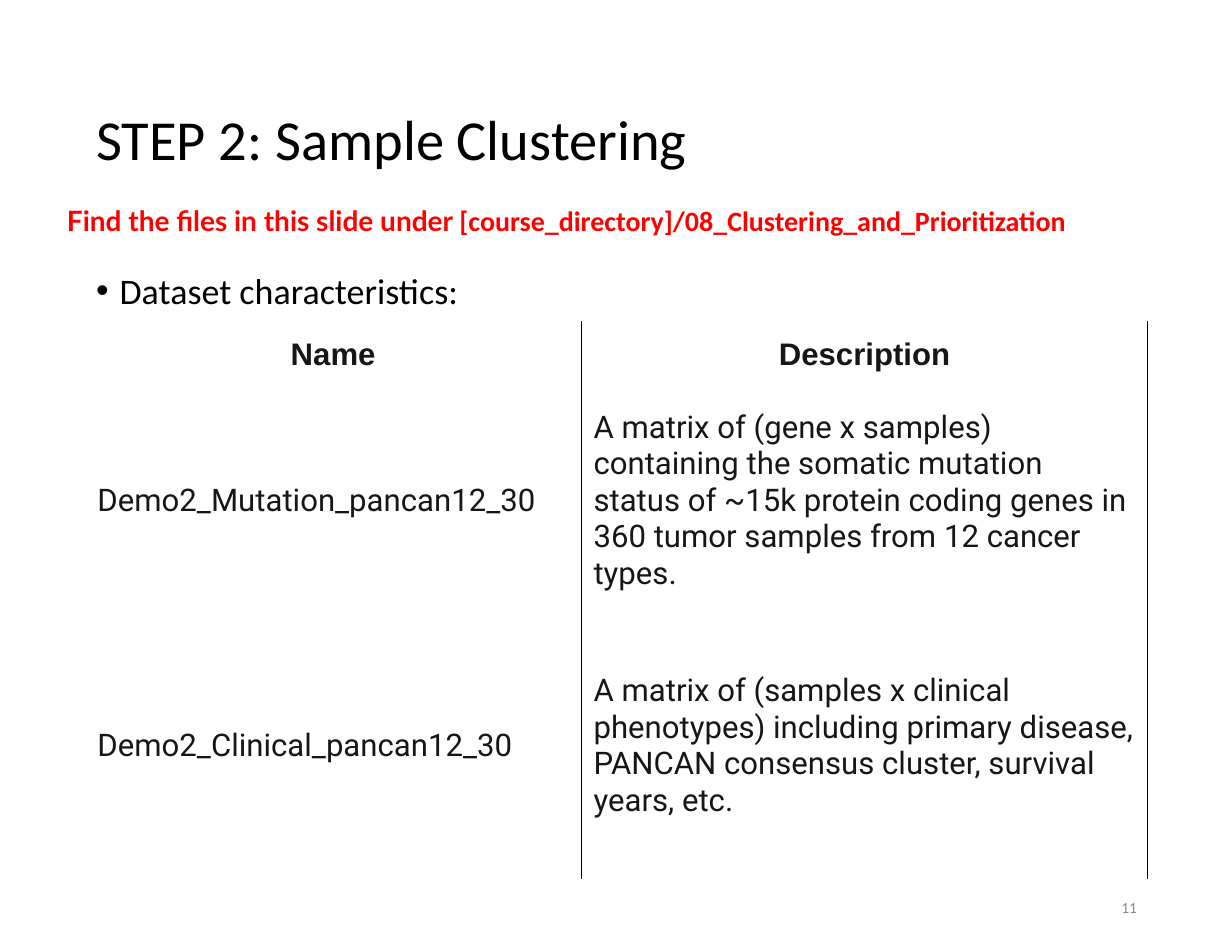
from lxml import etree
from pptx import Presentation
from pptx import util as u
from pptx.dml.color import RGBColor
from pptx.enum import text
from pptx.oxml.ns import qn

MIDDLE = text.MSO_ANCHOR.MIDDLE
LEFT, CENTER, RIGHT = text.PP_ALIGN.LEFT, text.PP_ALIGN.CENTER, text.PP_ALIGN.RIGHT

# Each run: words, font, size, bold, colour
TITLE = [("STEP 2: Sample Clustering", "Calibri", 36.3, False, "000000")]
BULLET = [("Dataset characteristics:", "Calibri", 23.1, False, "000000")]
PAGE_NUMBER = [("11", "Calibri", 9.9, False, "888888")]
FILE_NOTE = [
    ("Find the files in this slide under\u00a0", "Lato", 18, True, "FF0000"),
    ("[course_directory]/08_Clustering_and_Prioritization", "Calibri", 18, True, "FF0000"),
]
DATASETS = [
    ("Name", "Description"),
    ("Demo2_Mutation_pancan12_30",
     "A matrix of (gene x samples) containing the somatic mutation status of "
     "~15k protein coding genes in 360 tumor samples from 12 cancer types."),
    ("Demo2_Clinical_pancan12_30",
     "A matrix of (samples x clinical phenotypes) including primary disease, "
     "PANCAN consensus cluster, survival years, etc."),
]
CONTENT_LEFT, CONTENT_WIDTH = 0.76, 9.49
COLUMN_WIDTHS = [4.43, 5.06]
ROW_HEIGHTS = [0.6, 2, 2.38]
CELL_FORMAT = {
    "vertical_anchor": MIDDLE,
    "margin_left": u.Inches(0.11), "margin_right": u.Inches(0.11),
    "margin_top": u.Inches(0.06), "margin_bottom": u.Inches(0.06),
}


def color(hex_value):
    return RGBColor.from_string(hex_value)


def add_runs(paragraph, runs):
    for words, font, size, bold, hex_value in runs:
        run = paragraph.add_run()
        run.text = words
        values = {"name": font, "size": u.Pt(size), "bold": bold}
        for key, value in values.items():
            setattr(run.font, key, value)
        run.font.color.rgb = color(hex_value)


def add_text(slide, place, runs, anchor=text.MSO_ANCHOR.TOP, align=LEFT,
             line_spacing=1.0, bullet=False):
    frame = slide.shapes.add_textbox(*map(u.Inches, place)).text_frame
    frame.word_wrap = True
    frame.vertical_anchor = anchor
    paragraph = frame.paragraphs[0]
    paragraph.alignment = align
    paragraph.line_spacing = line_spacing
    if bullet:
        properties = paragraph._p.get_or_add_pPr()
        indent = u.Inches(0.21)
        properties.set("marL", str(indent))
        properties.set("indent", str(-indent))
        etree.SubElement(properties, qn("a:buFont"), typeface="Arial")
        etree.SubElement(properties, qn("a:buChar"), char="•")
    add_runs(paragraph, runs)


def set_borders(cell, ruled_sides):
    """Rule the given sides in thin black and leave the others without a line."""
    properties = cell._tc.get_or_add_tcPr()
    for index, side in enumerate("LRTB"):
        line = etree.Element(qn(f"a:ln{side}"), w=str(u.Pt(0.75)))
        if side in ruled_sides:
            fill = etree.SubElement(line, qn("a:solidFill"))
            etree.SubElement(fill, qn("a:srgbClr"), val="000000")
        else:
            etree.SubElement(line, qn("a:noFill"))
        properties.insert(index, line)


def add_dataset_table(slide):
    place = (CONTENT_LEFT, 2.87, CONTENT_WIDTH, sum(ROW_HEIGHTS))
    table = slide.shapes.add_table(
        len(DATASETS), len(COLUMN_WIDTHS), *map(u.Inches, place)).table
    table.first_row = table.horz_banding = False
    for column, width in zip(table.columns, COLUMN_WIDTHS):
        column.width = u.Inches(width)
    for row, height in zip(table.rows, ROW_HEIGHTS):
        row.height = u.Inches(height)
    for r, dataset in enumerate(DATASETS):
        header = r == 0
        for c, words in enumerate(dataset):
            cell = table.cell(r, c)
            for key, value in CELL_FORMAT.items():
                setattr(cell, key, value)
            cell.fill.background()
            set_borders(cell, "R" if c == 0 else "LR")
            paragraph = cell.text_frame.paragraphs[0]
            paragraph.alignment = CENTER if header else LEFT
            font = "Arial" if header else "Roboto"
            add_runs(paragraph, [(words, font, 20, header, "161616")])


def main():
    deck = Presentation()
    deck.slide_width, deck.slide_height = u.Inches(11), u.Inches(8.5)
    slide = deck.slides.add_slide(deck.slide_layouts[6])
    add_text(slide, (CONTENT_LEFT, 0.45, CONTENT_WIDTH, 1.64), TITLE,
             anchor=MIDDLE, line_spacing=0.9)
    add_text(slide, (CONTENT_LEFT, 2.39, CONTENT_WIDTH, 5.39), BULLET,
             line_spacing=0.9, bullet=True)
    add_text(slide, (7.77, 7.88, 2.48, 0.45), PAGE_NUMBER, anchor=MIDDLE, align=RIGHT)
    add_dataset_table(slide)
    add_text(slide, (0.5, 1.77, 9.87, 0.4), FILE_NOTE)
    deck.save("out.pptx")


if __name__ == "__main__":
    main()
